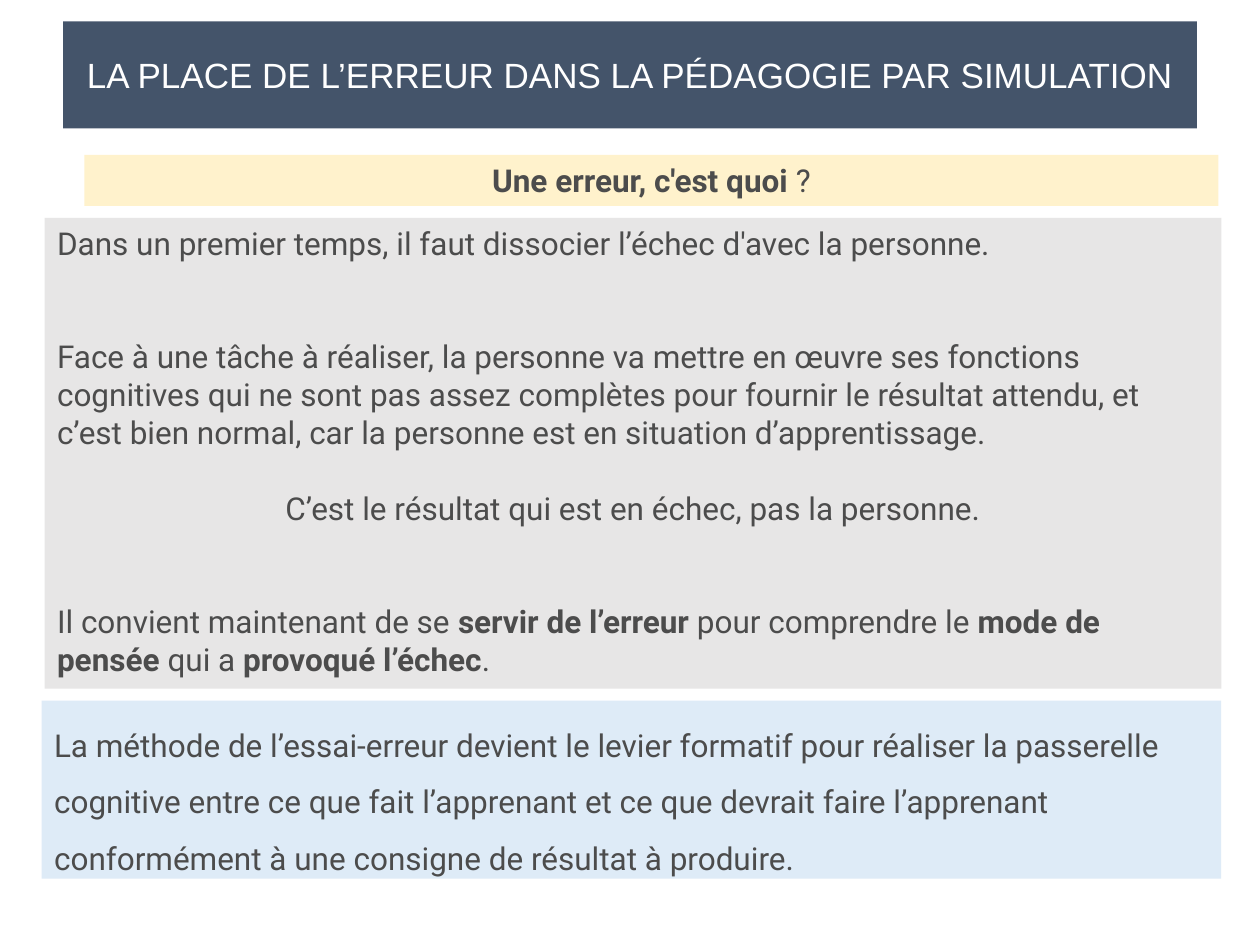
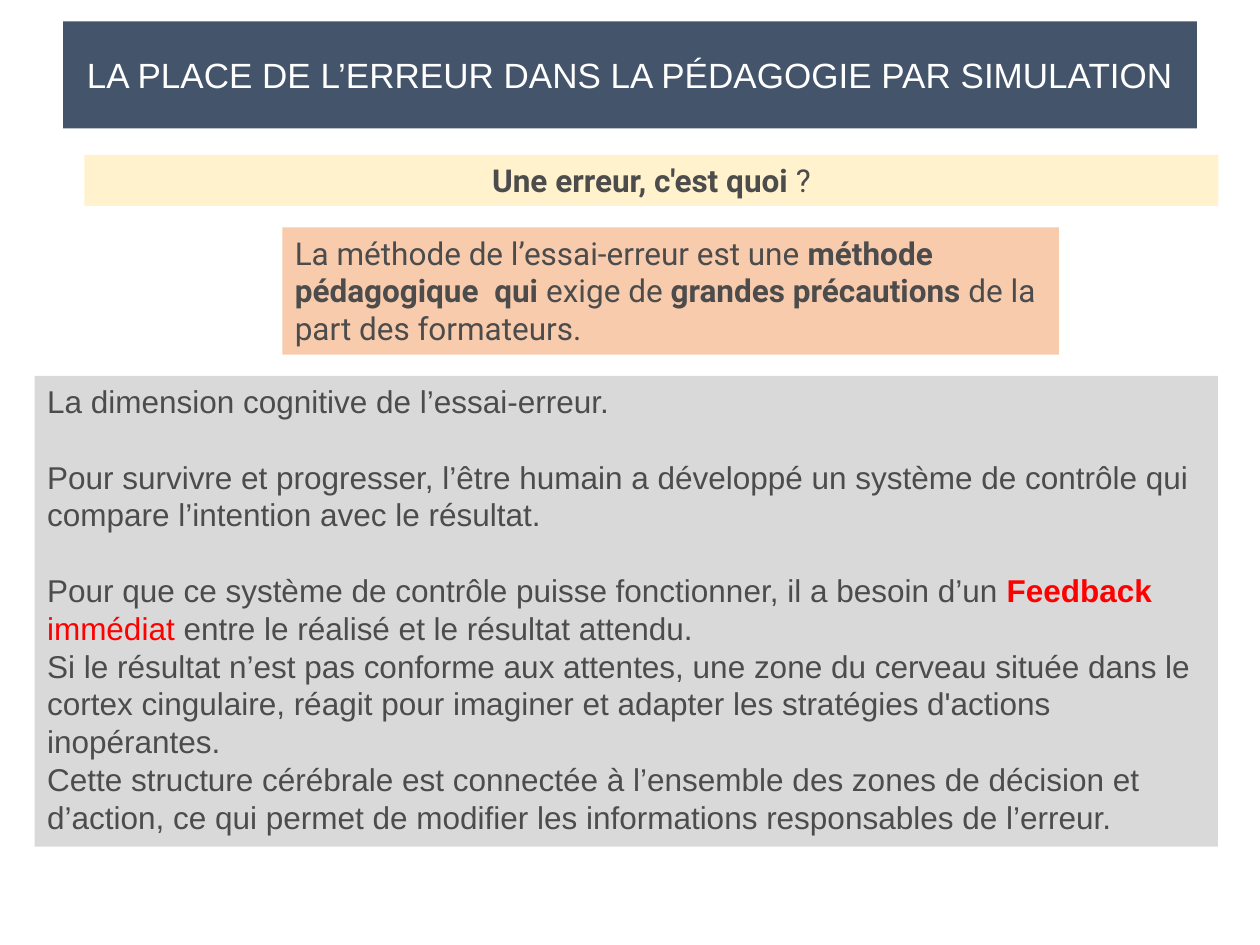
from pptx import Presentation
from pptx.dml.color import RGBColor
from pptx.enum.shapes import MSO_SHAPE
from pptx.enum.text import MSO_ANCHOR, MSO_AUTO_SIZE, PP_ALIGN
from pptx.util import Pt

COLOURS = {
    "navy": "44546A",
    "cream": "FFF2CC",
    "pale grey": "E7E6E6",
    "grey": "D9D9D9",
    "pale blue": "DEEBF7",
    "peach": "F8CBAD",
    "text": "4C4C4C",
    "red": "FF0000",
    "white": "FFFFFF",
}
TITLE = "LA PLACE DE L’ERREUR DANS LA PÉDAGOGIE PAR SIMULATION"
TITLE_ONLY = 5
LINE = 21.6


def colour(name):
    return RGBColor.from_string(COLOURS[name])


def bold(text, tint="text"):
    return text, True, tint


def plain(text, tint="text"):
    return text, False, tint


class Deck:
    def __init__(self):
        self.presentation = Presentation()
        self.presentation.slide_width = Pt(720)
        self.presentation.slide_height = Pt(540)
        self.slide = None

    def add_slide(self):
        """Start a slide with the shared title band and question."""
        layout = self.presentation.slide_layouts[TITLE_ONLY]
        self.slide = self.presentation.slides.add_slide(layout)
        self.title(TITLE)
        self.panel(48.25, 88.5, 648, 29.1, "cream",
                   [([bold("Une erreur, c'est quoi "), plain("?")], 0, PP_ALIGN.CENTER)])

    def title(self, text):
        band = self.slide.shapes.title
        band.left, band.top, band.width, band.height = Pt(36), Pt(12.25), Pt(648), Pt(61.2)
        band.fill.solid()
        band.fill.fore_color.rgb = colour("navy")
        frame = band.text_frame
        frame.text = text
        frame.word_wrap = True
        frame.auto_size = MSO_AUTO_SIZE.NONE
        frame.vertical_anchor = MSO_ANCHOR.MIDDLE
        frame.margin_left = frame.margin_right = frame.margin_top = frame.margin_bottom = 0
        frame.paragraphs[0].alignment = PP_ALIGN.CENTER
        self.style(frame.paragraphs[0].runs[0], False, "white", "Arial", 20)

    def style(self, run, is_bold, tint, face, size=18):
        run.font.name = face
        run.font.size = Pt(size)
        run.font.bold = is_bold
        run.font.color.rgb = colour(tint)

    def panel(self, left, top, width, height, fill, paragraphs, face="Roboto", spacing=1):
        """Draw a filled box; each paragraph is (runs, blank lines before, alignment)."""
        box = self.slide.shapes.add_shape(
            MSO_SHAPE.RECTANGLE, Pt(left), Pt(top), Pt(width), Pt(height))
        box.shadow.inherit = False
        box.fill.solid()
        box.fill.fore_color.rgb = colour(fill)
        box.line.fill.background()
        frame = box.text_frame
        frame.word_wrap = True
        frame.vertical_anchor = MSO_ANCHOR.TOP
        for index, (runs, gap, alignment) in enumerate(paragraphs):
            paragraph = frame.add_paragraph() if index else frame.paragraphs[0]
            paragraph.alignment = alignment
            paragraph.line_spacing = Pt(LINE * spacing)
            if gap:
                paragraph.space_before = Pt(LINE * gap)
            for text, is_bold, tint in runs:
                run = paragraph.add_run()
                run.text = text
                self.style(run, is_bold, tint, face)


def error_and_person(deck):
    deck.add_slide()
    deck.panel(25.5, 124.5, 672.4, 269, "pale grey", [
        ([plain("Dans un premier temps, il faut dissocier l’échec d'avec la personne.")],
         0, PP_ALIGN.LEFT),
        ([plain("Face à une tâche à réaliser, la personne va mettre en œuvre ses fonctions "
                "cognitives qui ne sont pas assez complètes pour fournir le résultat attendu, "
                "et c’est bien normal, car la personne est en situation d’apprentissage.")],
         2, PP_ALIGN.LEFT),
        ([plain("C’est le résultat qui est en échec, pas la personne.")], 1, PP_ALIGN.CENTER),
        ([plain("Il convient maintenant de se "), bold("servir de l’erreur"),
          plain(" pour comprendre le "), bold("mode de pensée"),
          plain(" qui a "), bold("provoqué l’échec"), plain(".")], 2, PP_ALIGN.LEFT),
    ])
    deck.panel(23.8, 400.3, 674, 101.8, "pale blue", [
        ([plain("La méthode de l’essai-erreur devient le levier formatif pour réaliser la "
                "passerelle cognitive entre ce que fait l’apprenant et ce que devrait faire "
                "l’apprenant conformément à une consigne de résultat à produire.")],
         0, PP_ALIGN.LEFT),
    ], spacing=1.5)


def cognitive_dimension(deck):
    deck.add_slide()
    deck.panel(19.8, 214.8, 676.2, 269, "grey", [
        ([plain("La dimension cognitive de l’essai-erreur.")], 0, PP_ALIGN.LEFT),
        ([plain("Pour survivre et progresser, l’être humain a développé un système de "
                "contrôle qui compare l’intention avec le résultat.")], 1, PP_ALIGN.LEFT),
        ([plain("Pour que ce système de contrôle puisse fonctionner, il a besoin d’un "),
          bold("Feedback ", "red"), plain("immédiat ", "red"),
          plain("entre le réalisé et le résultat attendu.")], 1, PP_ALIGN.LEFT),
        ([plain("Si le résultat n’est pas conforme aux attentes, une zone du cerveau située "
                "dans le cortex cingulaire, réagit pour imaginer et adapter les stratégies "
                "d'actions inopérantes.")], 0, PP_ALIGN.LEFT),
        ([plain("Cette structure cérébrale est connectée à l’ensemble des zones de décision "
                "et d’action, ce qui permet de modifier les informations responsables de "
                "l’erreur.")], 0, PP_ALIGN.LEFT),
    ], face="Arial")
    deck.panel(161.4, 130, 443.8, 72.7, "peach", [
        ([plain("La méthode de l’essai-erreur est une "), bold("méthode pédagogique  qui "),
          plain("exige de "), bold("grandes précautions"),
          plain(" de la part des formateurs.")], 0, PP_ALIGN.LEFT),
    ])


def main():
    deck = Deck()
    error_and_person(deck)
    cognitive_dimension(deck)
    deck.presentation.save("out.pptx")


if __name__ == "__main__":
    main()
